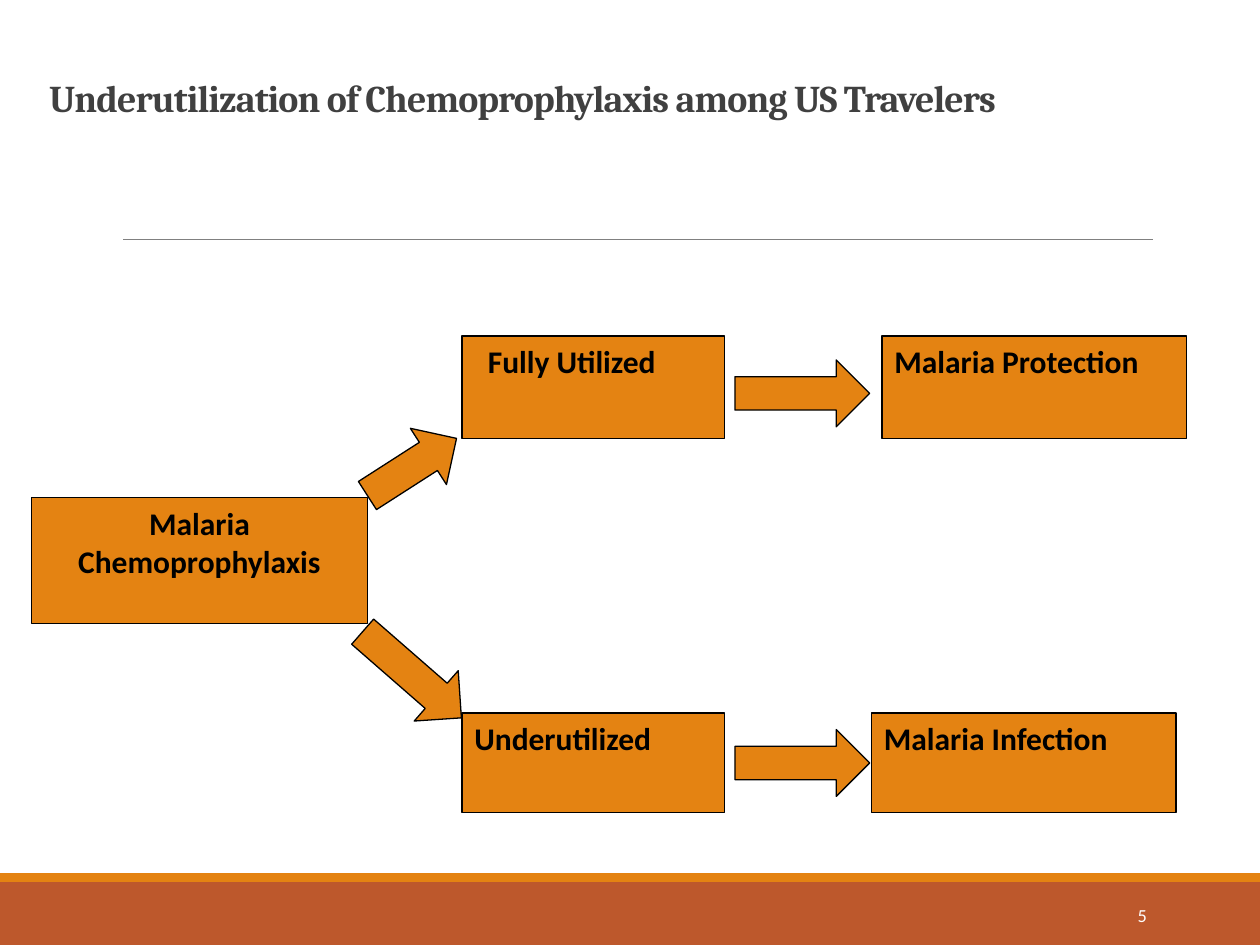
from dataclasses import dataclass

from lxml.etree import SubElement
from pptx import Presentation
from pptx.dml.color import RGBColor
from pptx.enum.shapes import MSO_CONNECTOR, MSO_SHAPE
from pptx.enum.text import MSO_ANCHOR, PP_ALIGN
from pptx.oxml.ns import qn
from pptx.util import Pt


@dataclass(frozen=True)
class Theme:
    """Colours, fonts and type sizes of the slide."""
    orange: str = "E48312"
    rust: str = "BD582C"
    rule: str = "808080"
    title: str = "404040"
    black: str = "000000"
    white: str = "FFFFFF"
    heading_font: str = "Cambria"
    body_font: str = "Calibri"
    title_size: float = 21.6
    box_size: float = 18
    number_size: float = 10.5
    outline: float = 0.75
    inset: float = 7.2


THEME = Theme()
SLIDE_WIDTH, SLIDE_HEIGHT = 720, 540
FOOTER_TOP, STRIPE_HEIGHT = 504, 5

TITLE = "Underutilization of Chemoprophylaxis among US Travelers"
PAGE_NUMBER = "5"

UPPER, LOWER = (192, 58.5), (407.5, 57)
MIDDLE_LEFT, MIDDLE_WIDTH, OUTCOME_WIDTH = 264, 150, 174
BOXES = [
    ("Malaria Chemoprophylaxis", 18, 192, (284.5, 72), PP_ALIGN.CENTER, 0),
    ("Fully Utilized", MIDDLE_LEFT, MIDDLE_WIDTH, UPPER, PP_ALIGN.LEFT, 7.6),
    ("Underutilized", MIDDLE_LEFT, MIDDLE_WIDTH, LOWER, PP_ALIGN.LEFT, 0),
    ("Malaria Protection", 504, OUTCOME_WIDTH, UPPER, PP_ALIGN.LEFT, 0),
    ("Malaria Infection", 498, OUTCOME_WIDTH, LOWER, PP_ALIGN.LEFT, 0),
]

ARROW_HEIGHT = 38.2
ARROWS = [
    (205.2, 247.7, 60.5, -32.7),
    (420, 205.7, 77, 0),
    (420, 416.9, 77, 0),
    (198, 366.5, 74.9, 41.1),
]


def add_block(page, kind, place, fill, outlined=True):
    """Add a filled preset shape."""
    block = page.shapes.add_shape(kind, *map(Pt, place))
    block.shadow.inherit = False
    block.fill.solid()
    block.fill.fore_color.rgb = RGBColor.from_string(fill)
    if outlined:
        block.line.color.rgb = RGBColor.from_string(THEME.black)
        block.line.width = Pt(THEME.outline)
    else:
        block.line.fill.background()
    return block


def write(shape, text, font, size, color, bold=False,
          align=PP_ALIGN.LEFT, anchor=MSO_ANCHOR.TOP, indent=0):
    """Write one styled paragraph and return it."""
    frame = shape.text_frame
    frame.word_wrap = True
    frame.vertical_anchor = anchor
    frame.margin_left = Pt(THEME.inset + indent)
    para = frame.paragraphs[0]
    para.text = text
    para.alignment = align
    para.font.name = font
    para.font.size = Pt(size)
    para.font.bold = bold
    para.font.color.rgb = RGBColor.from_string(color)
    return para


def add_frame(page):
    """Add the footer bands, rule, title and page number."""
    add_block(page, MSO_SHAPE.RECTANGLE,
              (0, FOOTER_TOP, SLIDE_WIDTH, SLIDE_HEIGHT - FOOTER_TOP),
              THEME.rust, outlined=False)
    add_block(page, MSO_SHAPE.RECTANGLE,
              (0, FOOTER_TOP - STRIPE_HEIGHT, SLIDE_WIDTH, STRIPE_HEIGHT),
              THEME.orange, outlined=False)
    rule = page.shapes.add_connector(
        MSO_CONNECTOR.STRAIGHT, *map(Pt, (70.5, 136.8, 659, 136.8)))
    rule.line.color.rgb = RGBColor.from_string(THEME.rule)
    rule.line.width = Pt(0.5)
    SubElement(rule._element.spPr, qn("a:effectLst"))

    title = page.shapes.add_textbox(*map(Pt, (21, 18.7, 648, 53.3)))
    para = write(title, TITLE, THEME.heading_font, THEME.title_size,
                 THEME.title, bold=True, anchor=MSO_ANCHOR.BOTTOM)
    para.line_spacing = 0.85
    para.runs[0].font._element.set("spc", "-50")

    number = page.shapes.add_textbox(*map(Pt, (584.6, 508.5, 77.8, 28.8)))
    write(number, PAGE_NUMBER, THEME.body_font, THEME.number_size,
          THEME.white, align=PP_ALIGN.RIGHT, anchor=MSO_ANCHOR.MIDDLE)


def add_flow(page):
    """Add the boxes and the block arrows between them."""
    for text, left, width, (top, height), align, indent in BOXES:
        box = add_block(page, MSO_SHAPE.RECTANGLE,
                        (left, top, width, height), THEME.orange)
        write(box, text, THEME.body_font, THEME.box_size, THEME.black,
              bold=True, align=align, indent=indent)
    for left, top, width, angle in ARROWS:
        arrow = add_block(page, MSO_SHAPE.RIGHT_ARROW,
                          (left, top, width, ARROW_HEIGHT), THEME.orange)
        arrow.rotation = angle


def main():
    """Build and save the slide."""
    deck = Presentation()
    deck.slide_width, deck.slide_height = Pt(SLIDE_WIDTH), Pt(SLIDE_HEIGHT)
    page = deck.slides.add_slide(deck.slide_layouts[6])
    add_frame(page)
    add_flow(page)
    deck.save("out.pptx")


if __name__ == "__main__":
    main()
